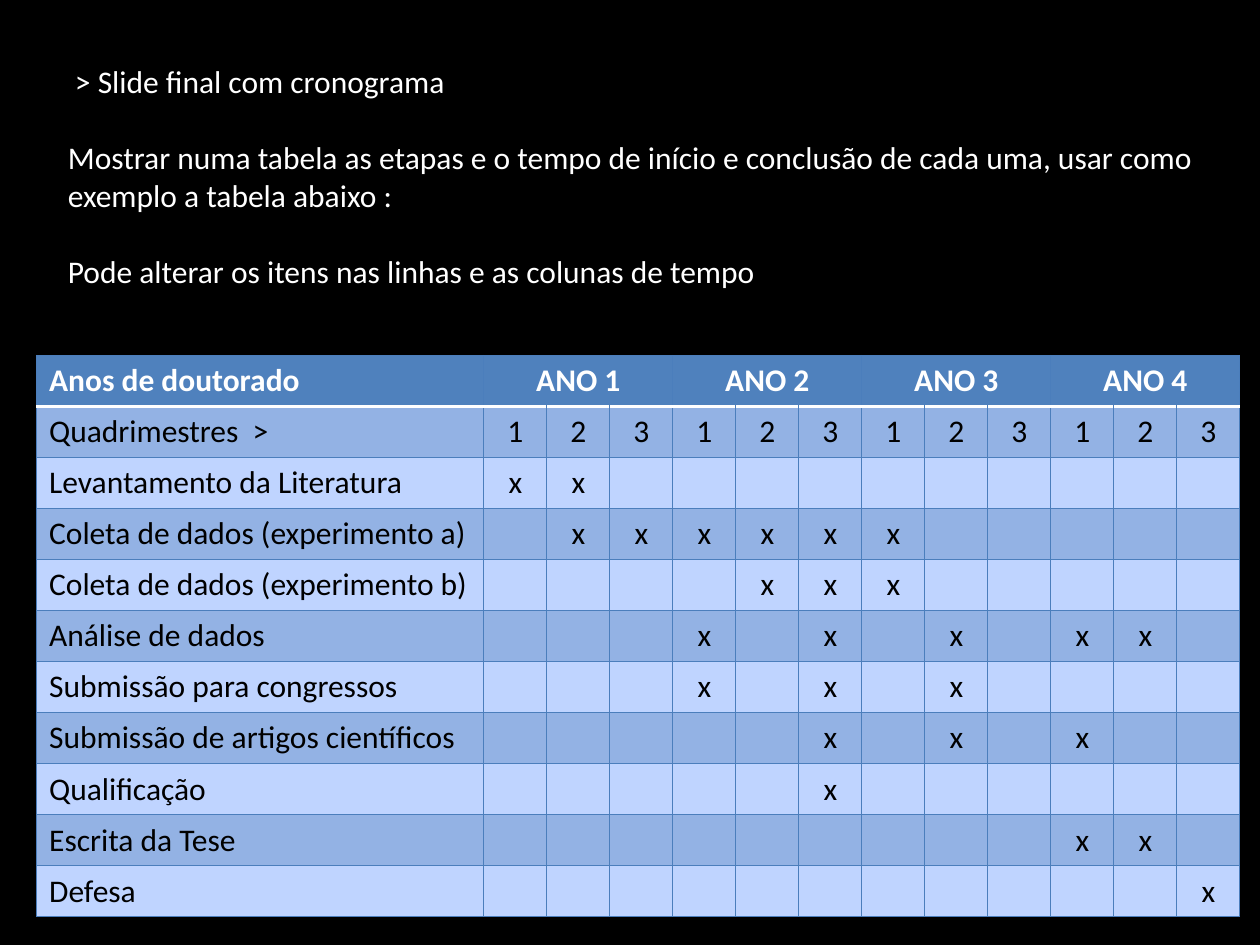
from lxml.etree import SubElement
from pptx import Presentation
from pptx.dml.color import RGBColor
from pptx.enum.text import MSO_ANCHOR, PP_ALIGN
from pptx.oxml.ns import qn
from pptx.util import Inches, Pt


def color(value):
    return RGBColor.from_string(value)


def add_text(para, text, ink, bold=False):
    span = para.add_run()
    span.text = text
    span.font.name = "Calibri"
    span.font.size = Pt(18)
    span.font.bold = bold
    span.font.color.rgb = color(ink)


deck = Presentation()
deck.slide_width = Inches(10)
deck.slide_height = Inches(7.5)
page = deck.slides.add_slide(deck.slide_layouts[6])
page.background.fill.solid()
page.background.fill.fore_color.rgb = color("000000")

instructions = [
    " > Slide final com cronograma",
    "Mostrar numa tabela as etapas e o tempo de início e conclusão de cada uma, "
    "usar como exemplo a tabela abaixo :",
    "Pode alterar os itens nas linhas e as colunas de tempo",
]
box = page.shapes.add_textbox(Inches(0.44), Inches(0.44), Inches(9.22), Inches(1.92))
frame = box.text_frame
frame.word_wrap = True
for index, text in enumerate(instructions):
    para = frame.add_paragraph() if index else frame.paragraphs[0]
    para.space_before = Pt(22 if index else 0)
    add_text(para, text, "FFFFFF")

years, terms = 4, 3
periods = years * terms
schedule = {
    "Levantamento da Literatura": [1, 2],
    "Coleta de dados (experimento a)": [2, 3, 4, 5, 6, 7],
    "Coleta de dados (experimento b)": [5, 6, 7],
    "Análise de dados": [4, 6, 8, 10, 11],
    "Submissão para congressos": [4, 6, 8],
    "Submissão de artigos científicos": [6, 8, 10],
    "Qualificação": [6],
    "Escrita da Tese": [10, 11],
    "Defesa": [12],
}
header = ["Anos de doutorado"]
for year in range(1, years + 1):
    header += [f"ANO {year}"] + [""] * (terms - 1)
rows = [header, ["Quadrimestres  >"] + [str(i % terms + 1) for i in range(periods)]]
for stage, active in schedule.items():
    rows.append([stage] + ["x" if i in active else "" for i in range(1, periods + 1)])

table = page.shapes.add_table(
    len(rows), periods + 1, Inches(0.29), Inches(2.82), Inches(9.56), Inches(4.46)
).table
for index, column in enumerate(table.columns):
    column.width = Inches(0.5 if index else 3.55)
for row in table.rows:
    row.height = Inches(4.46 / len(rows))
for start in range(1, periods + 1, terms):
    table.cell(0, start).merge(table.cell(0, start + terms - 1))

for row_index, row in enumerate(rows):
    is_header = row_index == 0
    fill = "4F81BD" if is_header else "93B2E4" if row_index % 2 else "BFD4FF"
    for column_index, text in enumerate(row):
        cell = table.cell(row_index, column_index)
        properties = cell._tc.get_or_add_tcPr()
        for side in ("lnL", "lnR", "lnT", "lnB"):
            under_header = (row_index, side) in ((0, "lnB"), (1, "lnT"))
            line = SubElement(properties, qn(f"a:{side}"), w=str(Pt(2 if under_header else 0.75)))
            paint = SubElement(line, qn("a:solidFill"))
            SubElement(paint, qn("a:srgbClr"), val="FFFFFF" if under_header else "4B7EBC")
        cell.fill.solid()
        cell.fill.fore_color.rgb = color(fill)
        if column_index:
            cell.vertical_anchor = MSO_ANCHOR.MIDDLE
        para = cell.text_frame.paragraphs[0]
        para.alignment = PP_ALIGN.CENTER if column_index else PP_ALIGN.LEFT
        if text:
            add_text(para, text, "FFFFFF" if is_header else "000000", is_header)

deck.save("out.pptx")
